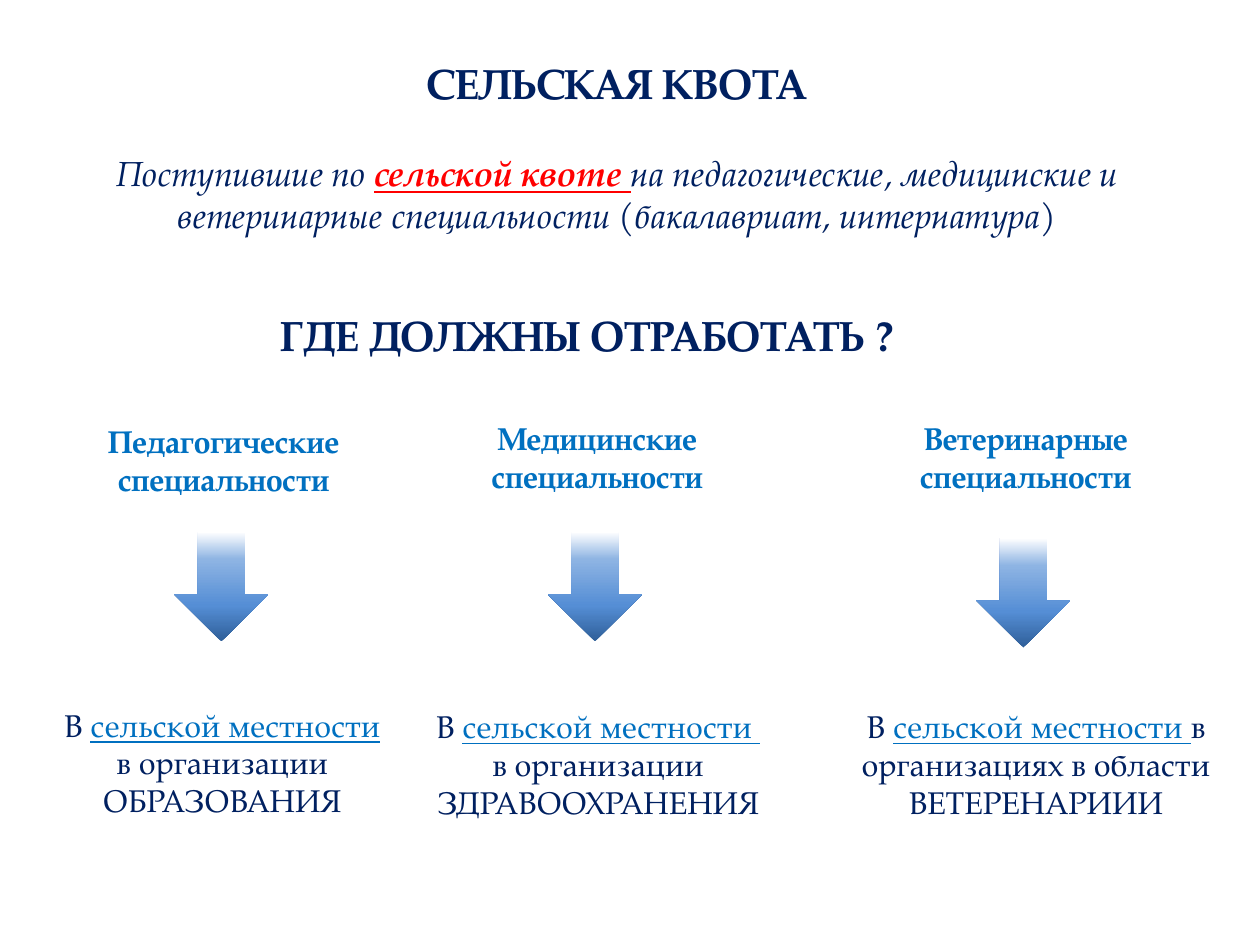
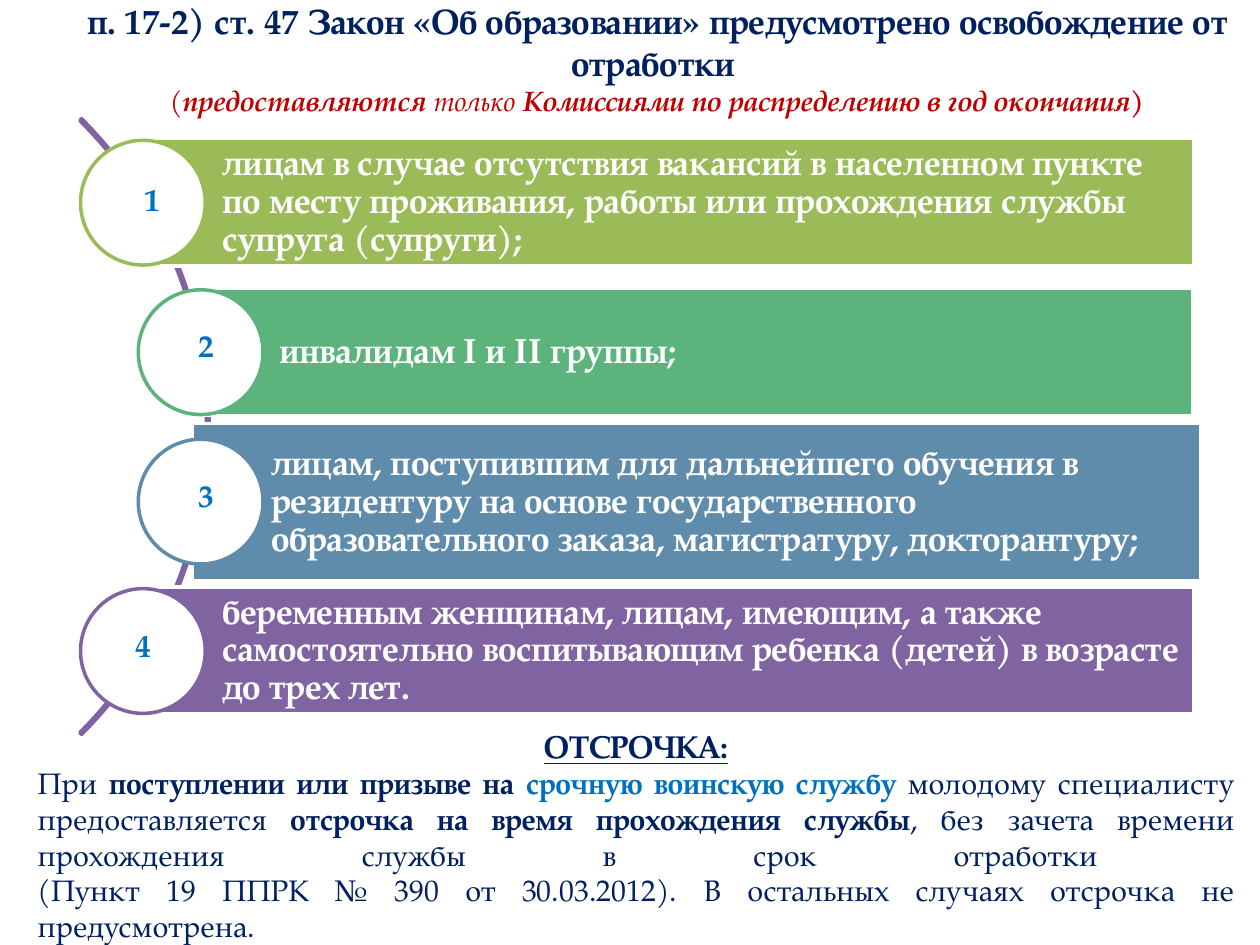
from copy import deepcopy

from lxml import etree
from pptx import Presentation
from pptx.dml.color import RGBColor
from pptx.enum import shapes, text
from pptx.oxml.ns import qn
from pptx.util import Pt

FONT = "TeX Gyre Pagella"
NAVY, BLUE, RED, DARK_RED, WHITE = "002060", "0070C0", "FF0000", "C00000", "FFFFFF"
GREEN, EMERALD, STEEL, PURPLE = "9BBB59", "5CB37C", "608CAB", "8064A2"
ARROW_STOPS = [(0, "2F5F99"), (33, "558ED5"), (75, "8EB4E3"), (100, WHITE)]
LEFT, CENTER, JUSTIFY = text.PP_ALIGN.LEFT, text.PP_ALIGN.CENTER, text.PP_ALIGN.JUSTIFY
SHAPE = shapes.MSO_SHAPE


def color(hex_string):
    return RGBColor.from_string(hex_string)


def write(paragraph, content, size=18, fill=NAVY, bold=False, italic=False, underline=False):
    """Add formatted text to a paragraph; each newline becomes a line break."""
    for index, line in enumerate(content.split("\n")):
        if index:
            paragraph.add_line_break()
            paragraph._p[-1].append(deepcopy(run._r.rPr))
        if not line:
            continue
        run = paragraph.add_run()
        run.text = line
        font = run.font
        font.name, font.size, font.color.rgb = FONT, Pt(size), color(fill)
        font.bold, font.italic, font.underline = bold, italic, underline


class Deck:
    """Holds the presentation, its shared style and the current slide."""

    def __init__(self):
        self.presentation = Presentation()
        self.presentation.slide_width = Pt(720)
        self.presentation.slide_height = Pt(540)
        self.slide = None

    def new_slide(self):
        self.slide = self.presentation.slides.add_slide(self.presentation.slide_layouts[5])

    def fill_text(self, shape, paragraphs, align, wrap=True, grow=True,
                  anchor=text.MSO_ANCHOR.TOP, line_spacing=None, **style):
        """Write paragraphs, each a list of (content, format) runs over the common style."""
        frame = shape.text_frame
        frame.word_wrap = wrap
        frame.vertical_anchor = anchor
        if grow:
            frame.auto_size = text.MSO_AUTO_SIZE.SHAPE_TO_FIT_TEXT
        for index, runs in enumerate(paragraphs):
            paragraph = frame.add_paragraph() if index else frame.paragraphs[0]
            paragraph.alignment = JUSTIFY if index else align
            if line_spacing:
                paragraph.line_spacing = line_spacing
            for content, changes in runs:
                write(paragraph, content, **{**style, **changes})

    def title(self, box, runs, **style):
        shape = self.slide.shapes.title
        shape.left, shape.top, shape.width, shape.height = map(Pt, box)
        self.fill_text(shape, [runs], CENTER, anchor=text.MSO_ANCHOR.MIDDLE, **style)

    def text_box(self, box, *paragraphs, align=CENTER, **style):
        shape = self.slide.shapes.add_textbox(*map(Pt, box))
        self.fill_text(shape, paragraphs, align, **style)

    def shape(self, kind, box, fill=None, line=None):
        shape = self.slide.shapes.add_shape(kind, *map(Pt, box))
        shape.shadow.inherit = False
        if fill:
            shape.fill.solid()
            shape.fill.fore_color.rgb = color(fill)
        else:
            shape.fill.background()
        if line:
            shape.line.color.rgb = color(line)
            shape.line.width = Pt(2)
        else:
            shape.line.fill.background()
        return shape

    def gradient_arrow(self, box):
        arrow = self.shape(SHAPE.DOWN_ARROW, box)
        arrow.fill.gradient()
        arrow.fill.gradient_angle = 90
        stops = arrow._element.spPr.find(qn("a:gradFill")).find(qn("a:gsLst"))
        for stop in list(stops):
            stops.remove(stop)
        for position, value in ARROW_STOPS:
            stop = etree.SubElement(stops, qn("a:gs"), pos=str(position * 1000))
            etree.SubElement(stop, qn("a:srgbClr"), val=value)

    def bar(self, box, fill, content):
        bar = self.shape(SHAPE.RECTANGLE, box, fill, WHITE)
        frame = bar.text_frame
        frame.margin_left = Pt(45)
        frame.margin_top = frame.margin_right = frame.margin_bottom = Pt(4.5)
        self.fill_text(bar, [[(content, {})]], LEFT, grow=False, line_spacing=0.9,
                       anchor=text.MSO_ANCHOR.MIDDLE, size=20, fill=WHITE, bold=True)


def rural_quota(deck):
    deck.new_slide()
    deck.title((213, 29, 279, 36), [("СЕЛЬСКАЯ КВОТА", {})], size=24, bold=True)
    deck.text_box((49, 83, 607, 55), [
        ("Поступившие по ", {}),
        ("сельской квоте ", dict(fill=RED, bold=True, underline=True)),
        ("на педагогические, медицинские и ветеринарные специальности "
         "(бакалавриат, интернатура)", {}),
    ], size=20, italic=True)
    deck.text_box((153.4, 173.5, 397, 36), [("ГДЕ ДОЛЖНЫ ОТРАБОТАТЬ ?", {})],
                  align=LEFT, wrap=False, size=24, bold=True)

    # specialty, heading left and top, arrow top, place left, top and width, place wording
    columns = [
        ("Педагогические", 37, 237.6, 304, 25, 399.6, 204,
         "сельской местности ", "в организации ОБРАЗОВАНИЯ"),
        ("Медицинские", 250.5, 236, 304, 237, 400.5, 209.5,
         "сельской местности \n", "в организации ЗДРАВООХРАНЕНИЯ"),
        ("Ветеринарные", 495.3, 236, 307.5, 470, 400.5, 244,
         "сельской местности ", "в организациях в области ВЕТЕРЕНАРИИИ"),
    ]
    for specialty, left, top, arrow_top, place_left, place_top, width, area, place in columns:
        deck.text_box((left, top, 181.5, 51), [(specialty + " специальности", {})],
                      fill=BLUE, bold=True)
        deck.gradient_arrow((left + 62.5, arrow_top, 54, 62.6))
        deck.text_box((place_left, place_top, width, 73),
                      [("В ", {}), (area, dict(fill=BLUE, underline=True)), (place, {})])


def exemptions(deck):
    deck.new_slide()
    note = dict(size=16, fill=DARK_RED, bold=False, italic=True)
    strong_note = {**note, "bold": True}
    deck.title((31, -4.3, 689, 75), [
        ("п. 17-2) ст. 47 Закон «Об образовании» предусмотрено освобождение "
         "от отработки \n", {}),
        ("(", note),
        ("предоставляются ", strong_note),
        ("только ", note),
        ("Комиссиями по распределению в год окончания)", strong_note),
    ], size=20, bold=True)

    arc = deck.shape(SHAPE.BLOCK_ARC, (-378, -5, 497.5, 497.5), line=PURPLE)
    for index, value in enumerate((189, 27, 0.003)):
        arc.adjustments[index] = value

    pitch, circle = 85.4, 71.3
    # colour, bar box, circle left, number left and top, wording
    groups = [
        (GREEN, (82, 79.2, 600, 72.7), 46, 75.6, 99.4,
         "лицам в случае отсутствия вакансий в населенном пункте по месту проживания, "
         "работы или прохождения службы супруга (супруги);"),
        (EMERALD, (114.8, 164.7, 567, 72.7), 79, 106.6, 182.9,
         "инвалидам I и II группы;"),
        (STEEL, (110, 242, 576, 90), 79, 106.6, 268.6,
         "лицам, поступившим для дальнейшего обучения в резидентуру на основе "
         "государственного образовательного заказа, магистратуру, докторантуру;"),
        (PURPLE, (82, 335.4, 600, 72.7), 46, 70.6, 354.2,
         "беременным женщинам, лицам, имеющим, а также самостоятельно воспитывающим "
         "ребенка (детей) в возрасте до трех лет."),
    ]
    for index, (fill, box, circle_left, number_left, number_top, wording) in enumerate(groups):
        deck.bar(box, fill, wording)
        deck.shape(SHAPE.OVAL, (circle_left, 80.2 + index * pitch, circle, circle), WHITE, fill)
        deck.text_box((number_left, number_top, 23.8, 29), [(str(index + 1), {})],
                      align=LEFT, wrap=False, fill=BLUE, bold=True)

    deck.text_box(
        (14.4, 412, 698, 132),
        [("ОТСРОЧКА:", dict(size=18, bold=True, underline=True))],
        [("При ", {}),
         ("поступлении или призыве на ", dict(bold=True)),
         ("срочную воинскую службу ", dict(bold=True, fill=BLUE)),
         ("молодому специалисту предоставляется ", {}),
         ("отсрочка на время прохождения службы", dict(bold=True)),
         (", без зачета времени прохождения службы в срок отработки \n"
          "(Пункт 19 ППРК № 390 от 30.03.2012). В остальных случаях отсрочка "
          "не предусмотрена.", {})],
        size=17)


def main():
    deck = Deck()
    rural_quota(deck)
    exemptions(deck)
    deck.presentation.save("out.pptx")


if __name__ == "__main__":
    main()
